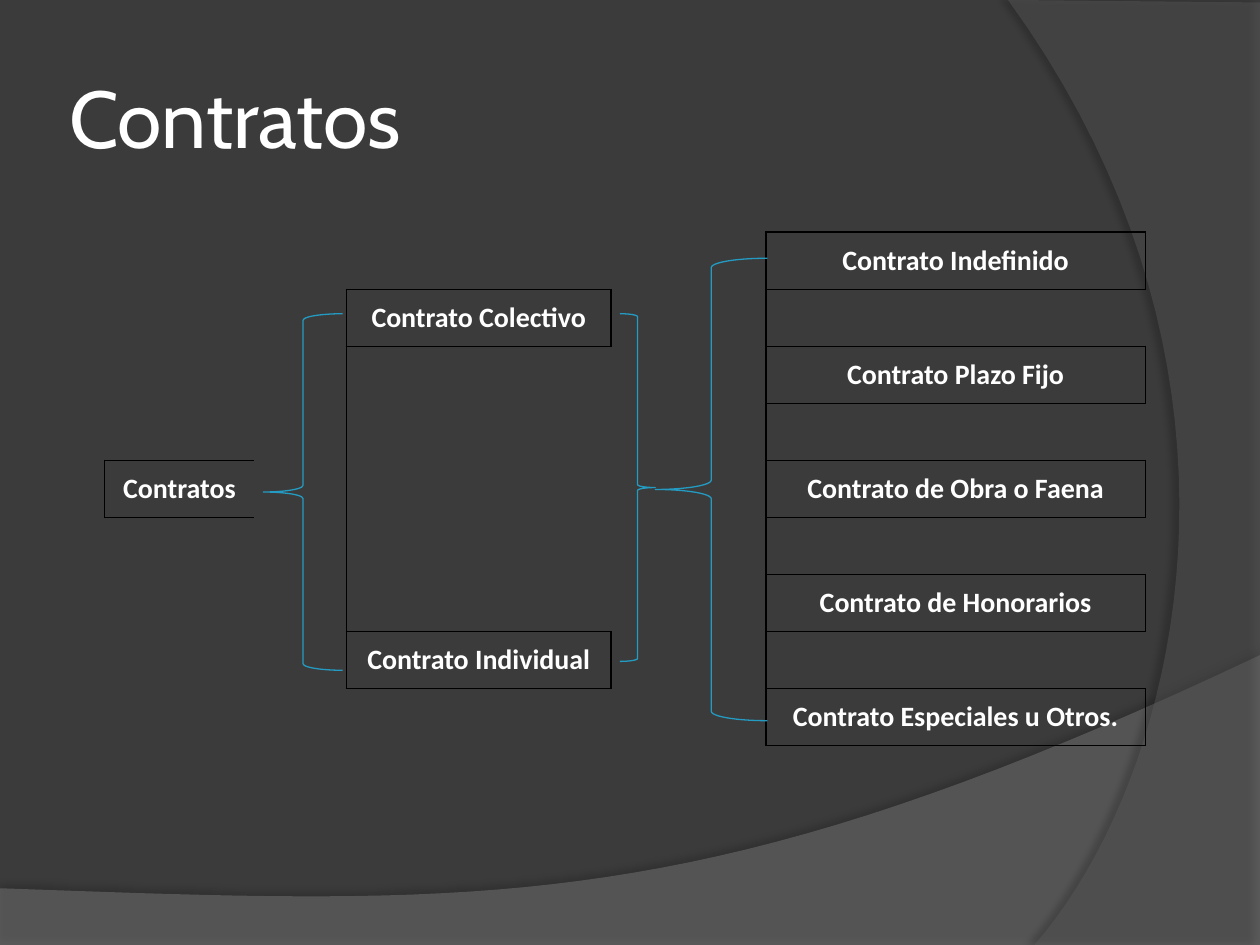
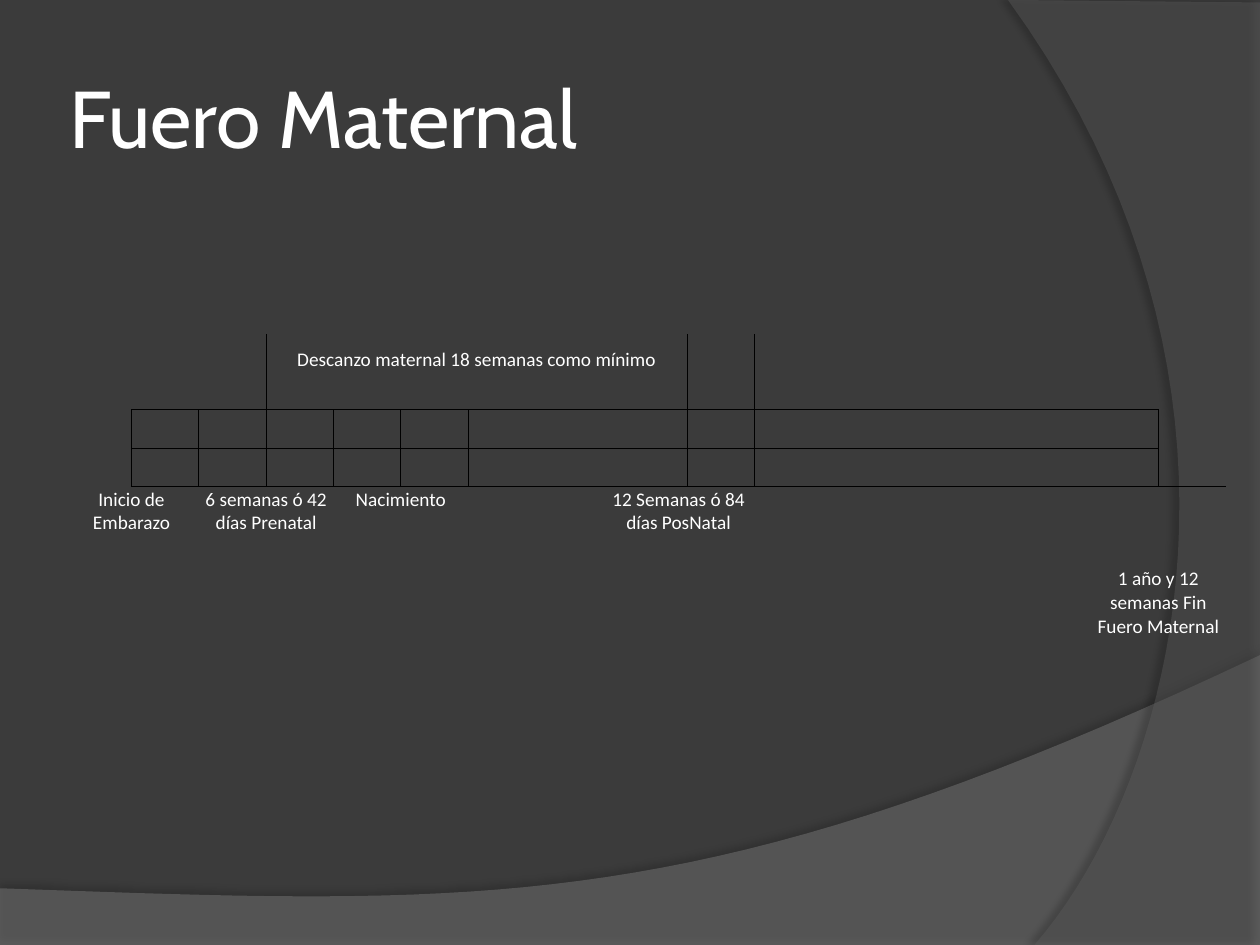
from lxml import etree
from pptx import Presentation
from pptx.dml.color import RGBColor as RGB
from pptx.enum.shapes import MSO_SHAPE as Shape
from pptx.enum.text import MSO_ANCHOR as Anchor, PP_ALIGN as Align
from pptx.oxml.ns import qn
from pptx.util import Inches, Pt

INK = {"back": "3B3B3B", "text": "FFFFFF", "brace": "239BC2", "edge": "000000",
       "wave": "7F7F7F", "arc": "5E5E5E"}
PLAIN = "{2D5ABB26-0587-4C30-8999-92F81FD0307C}"  # table style without grid

# colour, opacity, start, then lines (2 values) and curves (6 values), shadow
BANDS = [
    ("wave", 45, (0, 7.05), [(0, 7.5), (10, 7.5), (10, 5.2), (5.59, 7.29, 3.91, 7.19, 0, 7.05)],
     (35, 3.5, 270)),
    ("arc", 40, (10, 0.02), [(10, 7.5), (8.21, 7.5), (9.35, 6.19, 10.18, 3, 8, 0)],
     (45, 4, 180)),
]


def add_grid(page, left, top, cols, rows):
    """Add a table without style, fill or grid."""
    frame = page.shapes.add_table(len(rows), len(cols), Inches(left), Inches(top),
                                  Inches(sum(cols)), Inches(sum(rows)))
    grid = frame.table
    grid.first_row = grid.horz_banding = False
    grid._tbl.tblPr.find(qn("a:tableStyleId")).text = PLAIN
    for col, width in zip(grid.columns, cols):
        col.width = Inches(width)
    for row, height in zip(grid.rows, rows):
        row.height = Inches(height)
    return grid


def set_cell(cell, text, size, bold, pad, anchor, edges):
    """Write and style a cell; edges maps the sides L, R, T, B to a line width."""
    cell.fill.background()
    cell.margin_left = cell.margin_right = cell.margin_top = Inches(pad)
    cell.margin_bottom = 0
    cell.vertical_anchor = anchor
    par = cell.text_frame.paragraphs[0]
    par.alignment = Align.CENTER
    if text:
        par.text = text
        font = par.runs[0].font
        font.name, font.size, font.bold = "Calibri", Pt(size), bold
        font.color.rgb = RGB.from_string(INK["text"])
    else:
        etree.SubElement(par._p, qn("a:endParaRPr"), sz=str(size * 100))
    sides = [side for side in "LRTB" if side in edges]
    for i, side in enumerate(sides):
        line = etree.Element(qn("a:ln" + side), w=str(Pt(edges[side])))
        fill = etree.SubElement(line, qn("a:solidFill"))
        etree.SubElement(fill, qn("a:srgbClr"), val=INK["edge"])
        cell._tc.get_or_add_tcPr().insert(i, line)


prs = Presentation()
prs.slide_width, prs.slide_height = Inches(10), Inches(7.5)
pages = []
for title in ("Contratos", "Fuero Maternal"):
    page = prs.slides.add_slide(prs.slide_layouts[6])
    pages.append(page)
    page.background.fill.solid()
    page.background.fill.fore_color.rgb = RGB.from_string(INK["back"])

    for name, alpha, start, steps, (dark, dist, angle) in BANDS:
        pts = [start]
        for step in steps:
            if len(step) == 2:
                pts.append(step)
                continue
            ctrl = [pts[-1], step[:2], step[2:4], step[4:]]
            for k in range(1, 41):
                t = k / 40
                mix = ((1 - t) ** 3, 3 * t * (1 - t) ** 2, 3 * t * t * (1 - t), t ** 3)
                pts.append(tuple(sum(m * c[axis] for m, c in zip(mix, ctrl)) for axis in (0, 1)))
        pts = [(Inches(x), Inches(y)) for x, y in pts]
        pen = page.shapes.build_freeform(*pts[0], scale=1.0)
        pen.add_line_segments(pts[1:], close=True)
        band = pen.convert_to_shape()
        band.fill.solid()
        band.fill.fore_color.rgb = RGB.from_string(INK[name])
        band.line.fill.background()
        band.shadow.inherit = False
        props = band._element.spPr
        tint = props.find(qn("a:solidFill")).find(qn("a:srgbClr"))
        etree.SubElement(tint, qn("a:alpha"), val=str(alpha * 1000))
        glow = etree.SubElement(props.find(qn("a:effectLst")), qn("a:outerShdw"),
                                blurRad=str(Pt(4)), dist=str(Pt(dist)),
                                dir=str(angle * 60000), algn="ctr", rotWithShape="0")
        tone = etree.SubElement(glow, qn("a:srgbClr"), val=INK["edge"])
        etree.SubElement(tone, qn("a:alpha"), val=str(dark * 1000))

    box = page.shapes.add_textbox(Inches(0.5), Inches(0.3), Inches(8.17), Inches(1.25))
    frame = box.text_frame
    frame.word_wrap = True
    frame.vertical_anchor = Anchor.MIDDLE
    frame.margin_left = frame.margin_right = Inches(0.05)
    frame.text = title
    font = frame.paragraphs[0].runs[0].font
    font.name, font.size = "Cabin", Pt(46)
    font.color.rgb = RGB.from_string(INK["text"])

# Contratos: tree of contract types
tree, fuero = pages
kinds = ["Contrato Indefinido", "Contrato Plazo Fijo", "Contrato de Obra o Faena",
         "Contrato de Honorarios", "Contrato Especiales u Otros."]
nodes = {(5, 0): "Contratos", (2, 2): "Contrato Colectivo", (8, 2): "Contrato Individual"}
nodes.update({(1 + 2 * i, 4): kind for i, kind in enumerate(kinds)})
high = (4.96 - 0.43) / 10
grid = add_grid(tree, 0.83, 1.39, [1.19, 0.73, 2.1, 1.23, 3.01], [high] * 10 + [0.43])
for row in range(11):
    for col in range(5):
        text = nodes.get((row, col), "")
        sides = "" if not text else "LRTB" if col == 4 else "LTB"
        set_cell(grid.cell(row, col), text, 16, True, 0, Anchor.MIDDLE, dict.fromkeys(sides, 1))
grid.cell(2, 1).merge(grid.cell(8, 1))
grid.cell(1, 3).merge(grid.cell(9, 3))

for form, *place in [(Shape.LEFT_BRACE, 2.09, 2.49, 0.63, 2.83),
                     (Shape.RIGHT_BRACE, 4.92, 2.49, 0.28, 2.76),
                     (Shape.LEFT_BRACE, 5.2, 2.05, 0.89, 3.67)]:
    brace = tree.shapes.add_shape(form, *map(Inches, place))
    brace.shadow.inherit = False
    brace.fill.background()
    brace.line.color.rgb = RGB.from_string(INK["brace"])
    brace.line.width = Pt(0.75)

# Fuero Maternal: time line
unit = (9.22 - 0.67) / 16
rest = (0, 3)
notes = {rest: "Descanzo maternal 18 semanas como mínimo",
         (4, 0): "Inicio de Embarazo", (4, 2): "6 semanas ó 42 días Prenatal",
         (4, 4): "Nacimiento", (4, 8): "12 Semanas ó 84 días PosNatal",
         (4, 15): "1 año y 12 semanas Fin Fuero Maternal"}
ticks = {1: 2, 3: 0, 5: 2, 9: 0, 16: 2}  # column right of the tick: its first row
grid = add_grid(fuero, 0.51, 2.65, [unit] * 8 + [0.67] + [unit] * 8, [0.3, 0.3, 0.31, 0.3, 1.21])
for row in range(5):
    for col in range(17):
        edges = {}
        if row < 4:
            if ticks.get(col, 4) <= row:
                edges["L"] = 0.5
            if ticks.get(col + 1, 4) <= row:
                edges["R"] = 0.5
        if 1 <= col <= 15:
            if row in (1, 2):
                edges["B"] = 0.5 * row
            if row in (2, 3):
                edges["T"] = 0.5 * (row - 1)
        low = (row, col) in (rest, (4, 15))
        set_cell(grid.cell(row, col), notes.get((row, col), ""), 11, False, 0.01,
                 Anchor.BOTTOM if low else Anchor.TOP, edges)
for row in (0, 1):
    grid.cell(row, 3).merge(grid.cell(row, 8))
for row, col in notes:
    if row == 4:
        grid.cell(row, col).merge(grid.cell(row, col + 1))

prs.save("out.pptx")
